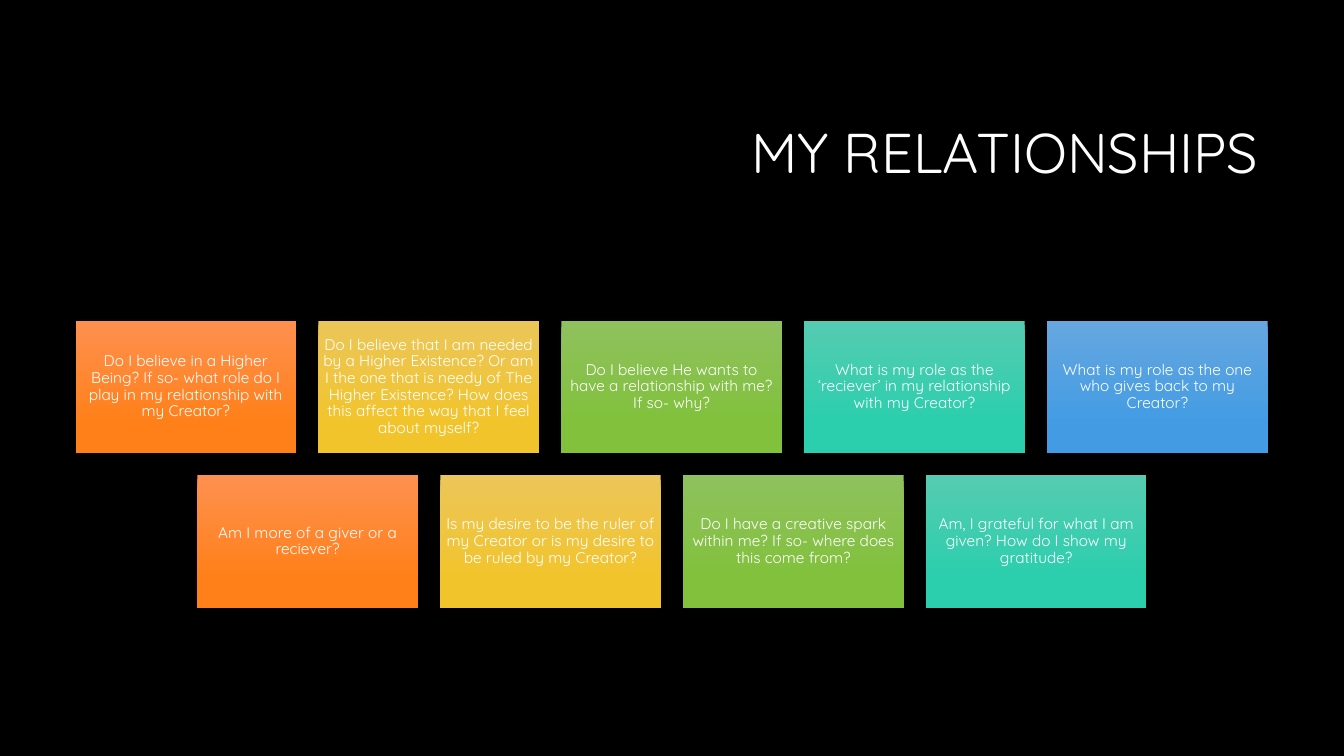
from dataclasses import dataclass

from pptx import Presentation
from pptx import util as u
from pptx.dml.color import RGBColor
from pptx.enum import shapes, text

PX = 6350  # EMU per px, 144 px to the inch
PAGE_W, PAGE_H = 1920, 1080
CARD_W, CARD_H, GAP = 315, 189, 32
ROWS_TOP = 458
CARD_INSET = 7
FONT = "Quicksand"

BLACK = RGBColor(0x00, 0x00, 0x00)
WHITE = RGBColor(0xFF, 0xFF, 0xFF)


@dataclass(frozen=True)
class Shade:
    top: RGBColor
    bottom: RGBColor


ORANGE = Shade(RGBColor(0xFE, 0x90, 0x4F), RGBColor(0xFF, 0x80, 0x19))
YELLOW = Shade(RGBColor(0xEB, 0xC6, 0x59), RGBColor(0xF2, 0xC4, 0x2C))
GREEN = Shade(RGBColor(0x8F, 0xC1, 0x5E), RGBColor(0x81, 0xC1, 0x3C))
TEAL = Shade(RGBColor(0x55, 0xCC, 0xB1), RGBColor(0x2B, 0xCE, 0xAD))
BLUE = Shade(RGBColor(0x66, 0xA7, 0xE0), RGBColor(0x43, 0x9C, 0xE3))


@dataclass(frozen=True)
class Card:
    question: str
    shade: Shade


ROWS = [
    [
        Card("Do I believe in a Higher Being? If so- what role do I play in my "
             "relationship with my Creator?", ORANGE),
        Card("Do I believe that I am needed by a Higher Existence? Or am I the one "
             "that is needy of The Higher Existence? How does this affect the way "
             "that I feel about myself?", YELLOW),
        Card("Do I believe He wants to have a relationship with me? If so- why?", GREEN),
        Card("What is my role as the ‘reciever’ in my relationship with my Creator?", TEAL),
        Card("What is my role as the one who gives back to my Creator?", BLUE),
    ],
    [
        Card("Am I more of a giver or a reciever?", ORANGE),
        Card("Is my desire to be the ruler of my Creator or is my desire to be ruled "
             "by my Creator?", YELLOW),
        Card("Do I have a creative spark within me? If so- where does this come from?", GREEN),
        Card("Am, I grateful for what I am given? How do I show my gratitude?", TEAL),
    ],
]


def px(length: int) -> u.Emu:
    return u.Emu(length * PX)


def write(frame, words: str, size: int, align) -> None:
    frame.word_wrap = True
    frame.auto_size = text.MSO_AUTO_SIZE.NONE
    frame.vertical_anchor = text.MSO_ANCHOR.MIDDLE
    para = frame.paragraphs[0]
    para.alignment = align
    para.line_spacing = 0.9
    span = para.add_run()
    span.text = words
    span.font.name = FONT
    span.font.size = u.Pt(size)
    span.font.color.rgb = WHITE


def add_title(page, words: str) -> None:
    title = page.shapes.title
    title.left, title.top, title.width, title.height = map(px, (456, 121, 1356, 203))
    write(title.text_frame, words, 40, text.PP_ALIGN.RIGHT)


def add_card(page, card: Card, left: int, top: int) -> None:
    box = page.shapes.add_shape(shapes.MSO_SHAPE.RECTANGLE,
                                px(left), px(top), px(CARD_W), px(CARD_H))
    box.shadow.inherit = False
    box.line.fill.background()
    box.fill.gradient()
    box.fill.gradient_angle = 270
    start, end = box.fill.gradient_stops
    start.position, start.color.rgb = 0, card.shade.top
    end.position, end.color.rgb = 0.78, card.shade.bottom
    frame = box.text_frame
    frame.margin_left = frame.margin_right = px(CARD_INSET)
    frame.margin_top = frame.margin_bottom = px(CARD_INSET)
    write(frame, card.question, 11, text.PP_ALIGN.CENTER)


def add_row(page, cards: list[Card], top: int) -> None:
    """Centre a row of cards on the page."""
    pitch = CARD_W + GAP
    left = (PAGE_W - len(cards) * pitch + GAP) // 2
    for column, card in enumerate(cards):
        add_card(page, card, left + column * pitch, top)


def main() -> None:
    deck = Presentation()
    deck.slide_width, deck.slide_height = px(PAGE_W), px(PAGE_H)
    page = deck.slides.add_slide(deck.slide_layouts.get_by_name("Title Only"))
    page.background.fill.solid()
    page.background.fill.fore_color.rgb = BLACK
    add_title(page, "MY RELATIONSHIPS")
    for index, cards in enumerate(ROWS):
        add_row(page, cards, ROWS_TOP + index * (CARD_H + GAP))
    deck.save("out.pptx")


if __name__ == "__main__":
    main()
